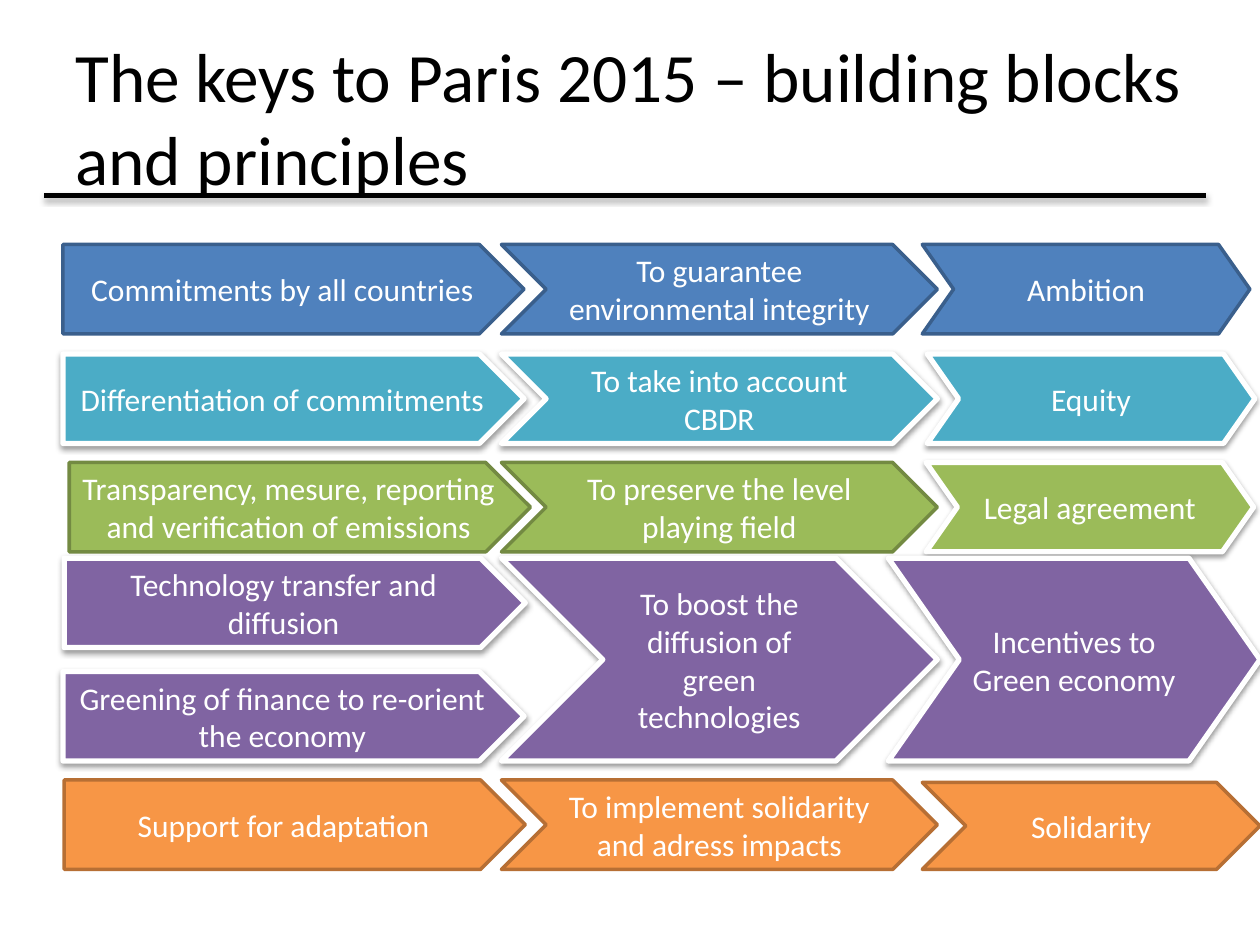
from dataclasses import dataclass

from lxml import etree
from pptx import Presentation
from pptx.dml.color import RGBColor
from pptx.enum.shapes import MSO_CONNECTOR, MSO_SHAPE
from pptx.enum.text import MSO_ANCHOR, PP_ALIGN
from pptx.oxml.ns import qn
from pptx.util import Inches, Pt

PENTAGON = MSO_SHAPE.PENTAGON
CHEVRON = MSO_SHAPE.CHEVRON
STRAIGHT = MSO_CONNECTOR.STRAIGHT
MIDDLE = MSO_ANCHOR.MIDDLE
LEFT, CENTER = PP_ALIGN.LEFT, PP_ALIGN.CENTER


@dataclass(frozen=True)
class Theme:
    font: str = "Calibri"
    title_size: float = 39.6
    body_size: float = 18
    black: str = "000000"
    white: str = "FFFFFF"
    blue: tuple = ("4F81BD", "3A5F8C")
    teal: tuple = ("4BACC6", "FFFFFF")
    green: tuple = ("9BBB59", "738A42")
    green_raised: tuple = ("9BBB59", "FFFFFF")
    purple: tuple = ("8064A2", "FFFFFF")
    orange: tuple = ("F79646", "B76F34")


class SlideBuilder:
    def __init__(self, slide, theme):
        self.slide = slide
        self.theme = theme

    def add_text(self, shape, text, size, color, alignment):
        frame = shape.text_frame
        for name, value in {"word_wrap": True, "vertical_anchor": MIDDLE}.items():
            setattr(frame, name, value)
        paragraph = frame.paragraphs[0]
        paragraph.alignment = alignment
        run = paragraph.add_run()
        run.text = text
        for name, value in {"name": self.theme.font, "size": Pt(size)}.items():
            setattr(run.font, name, value)
        run.font.color.rgb = RGBColor.from_string(color)

    def cast_shadow(self, shape, opacity, distance):
        """Add a soft shadow straight below the shape."""
        properties = shape._element.spPr
        for old_effects in properties.findall(qn("a:effectLst")):
            properties.remove(old_effects)
        effects = etree.SubElement(properties, qn("a:effectLst"))
        shadow = etree.SubElement(
            effects, qn("a:outerShdw"), blurRad=str(Pt(3.1)), dist=str(Pt(distance)),
            dir="5400000", rotWithShape="0")
        color = etree.SubElement(shadow, qn("a:srgbClr"), val=self.theme.black)
        etree.SubElement(color, qn("a:alpha"), val=str(opacity * 1000))

    def title(self, text, *box):
        shape = self.slide.shapes.add_textbox(*map(Inches, box))
        self.add_text(shape, text, self.theme.title_size, self.theme.black, LEFT)

    def rule(self, left, right, top):
        line = self.slide.shapes.add_connector(
            STRAIGHT, *map(Inches, (left, top, right, top)))
        line.line.color.rgb = RGBColor.from_string(self.theme.black)
        line.line.width = Pt(3)
        self.cast_shadow(line, 35, 1.8)

    def arrow(self, kind, text, colors, box, adjustment=0.5):
        """Draw a block arrow; a white outline makes it raised."""
        fill, outline = colors
        raised = outline == self.theme.white
        shape = self.slide.shapes.add_shape(kind, *map(Inches, box))
        shape.adjustments[0] = adjustment
        shape.shadow.inherit = False
        shape.fill.solid()
        shape.fill.fore_color.rgb = RGBColor.from_string(fill)
        shape.line.color.rgb = RGBColor.from_string(outline)
        shape.line.width = Pt(3 if raised else 2)
        if raised:
            self.cast_shadow(shape, 38, 1.6)
        self.add_text(shape, text, self.theme.body_size, self.theme.white, CENTER)


def main():
    presentation = Presentation()
    presentation.slide_width = Inches(10)
    presentation.slide_height = Inches(7.5)
    slide = presentation.slides.add_slide(presentation.slide_layouts[6])
    theme = Theme()
    builder = SlideBuilder(slide, theme)

    builder.title("The keys to Paris 2015 – building blocks and principles",
                  0.5, 0.3, 9, 1.25)
    builder.rule(0.35, 9.57, 1.55)

    row_height, tall_height = 0.71, 1.61
    block_width, principle_width, key_width = 3.66, 3.46, 2.6
    shallow = 0.35

    blocks = [
        ("Commitments by all countries", theme.blue, 0.5, 1.94),
        ("Differentiation of commitments", theme.teal, 0.5, 2.81),
        ("Transparency, mesure, reporting and verification of emissions",
         theme.green, 0.55, 3.67),
        ("Greening of finance to re-orient the economy", theme.purple, 0.5, 5.33),
        ("Technology transfer and diffusion", theme.purple, 0.51, 4.43),
        ("Support for adaptation", theme.orange, 0.51, 6.19),
    ]
    for text, colors, left, top in blocks:
        builder.arrow(PENTAGON, text, colors, (left, top, block_width, row_height))

    principles = [
        ("To guarantee environmental integrity", theme.blue, 1.94, row_height),
        ("To take into account CBDR", theme.teal, 2.81, row_height),
        ("To preserve the level playing field", theme.green, 3.67, row_height),
        ("To boost the diffusion of green technologies", theme.purple, 4.43, tall_height),
        ("To implement solidarity and adress impacts", theme.orange, 6.19, row_height),
    ]
    for text, colors, top, height in principles:
        builder.arrow(CHEVRON, text, colors, (3.98, top, principle_width, height))

    keys = [
        ("Ambition", theme.blue, (7.32, 1.94, key_width, row_height), shallow),
        ("Equity", theme.teal, (7.36, 2.81, key_width, row_height), shallow),
        ("Legal agreement", theme.green_raised,
         (7.35, 3.67, key_width, row_height), shallow),
        ("Incentives to Green economy", theme.purple,
         (7.05, 4.43, 2.95, tall_height), shallow),
        ("Solidarity", theme.orange, (7.32, 6.21, 2.68, 0.69), 0.5),
    ]
    for text, colors, box, adjustment in keys:
        builder.arrow(CHEVRON, text, colors, box, adjustment)

    presentation.save("out.pptx")


if __name__ == "__main__":
    main()
